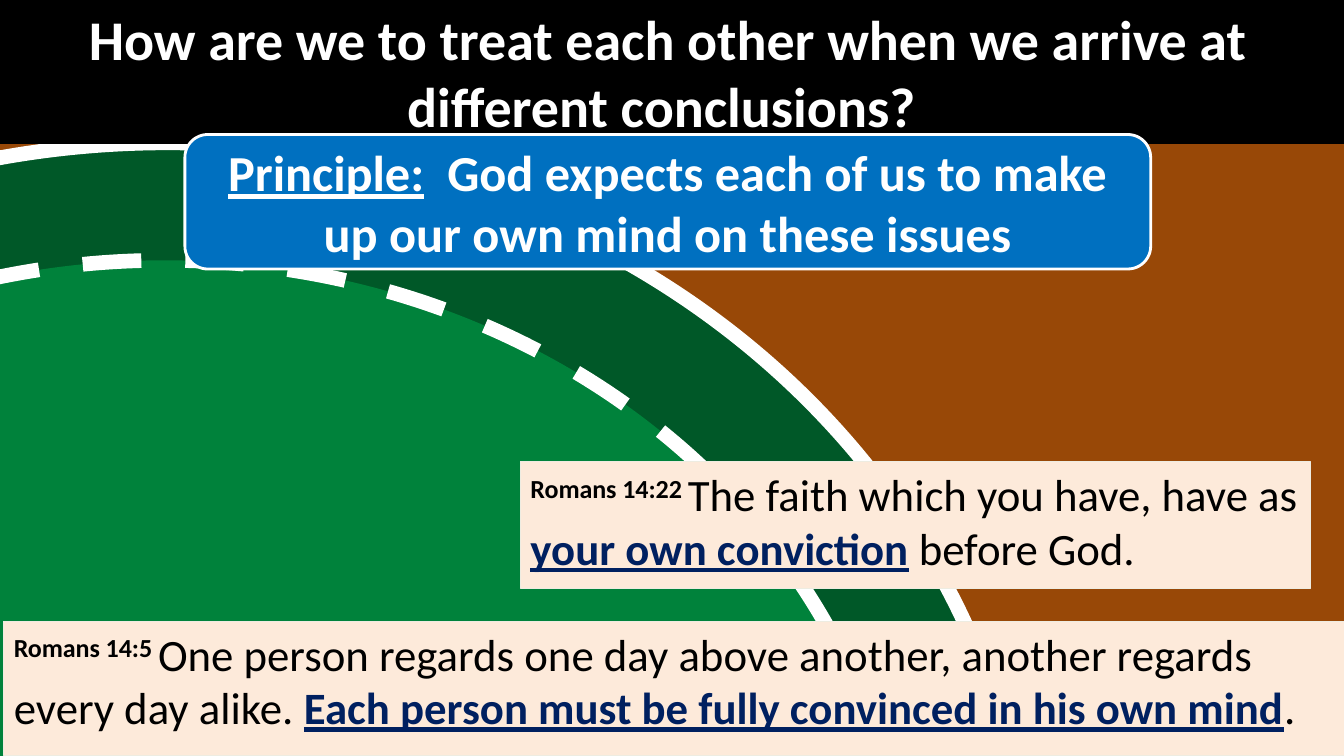
from dataclasses import dataclass

from pptx import Presentation
from pptx.dml.color import RGBColor
from pptx.enum.dml import MSO_LINE
from pptx.enum.shapes import MSO_SHAPE
from pptx.enum.text import MSO_ANCHOR, MSO_AUTO_SIZE, PP_ALIGN
from pptx.util import Cm, Pt

BLACK = RGBColor(0x00, 0x00, 0x00)
WHITE = RGBColor(0xFF, 0xFF, 0xFF)
BROWN = RGBColor(0x98, 0x48, 0x07)
DARK_GREEN = RGBColor(0x00, 0x58, 0x28)
GREEN = RGBColor(0x00, 0x82, 0x3B)
BLUE = RGBColor(0x00, 0x70, 0xC0)
NAVY = RGBColor(0x00, 0x20, 0x60)
CREAM = RGBColor(0xFD, 0xEA, 0xDA)
IVORY = RGBColor(0xEE, 0xEC, 0xE1)


@dataclass(frozen=True)
class Frame:
    """Left, top, width and height in centimetres."""
    left: float
    top: float
    width: float
    height: float


@dataclass(frozen=True)
class Span:
    text: str
    color: RGBColor
    bold: bool = False
    underline: bool = False


@dataclass(frozen=True)
class Circle:
    frame: Frame
    fill: RGBColor
    dash: MSO_LINE


@dataclass(frozen=True)
class Verse:
    frame: Frame
    reference: str
    opening: str
    emphasis: str
    ending: str


CIRCLES = [
    Circle(Frame(-17.57, 3.6, 43.6, 39.58), DARK_GREEN, MSO_LINE.SOLID),
    Circle(Frame(-14.6, 6.56, 37.47, 33.66), GREEN, MSO_LINE.DASH),
]
VERSES = [
    Verse(Frame(0.1, 15.66, 33.87, 3.39), "Romans 14:5 ",
          "One person regards one day above another, another regards every day alike. ",
          "Each person must be fully convinced in his own mind", "."),
    Verse(Frame(13.12, 11.64, 19.9, 3.18), "Romans 14:22 ",
          "The faith which you have, have as ", "your own conviction", " before God."),
]
TITLE_FRAME = Frame(-0.64, 0, 34.93, 3.6)
PRINCIPLE_FRAME = Frame(4.66, 3.39, 24.34, 3.39)


def paint(shape, fill: RGBColor, line: RGBColor, width: float) -> None:
    shape.fill.solid()
    shape.fill.fore_color.rgb = fill
    shape.line.color.rgb = line
    shape.line.width = Pt(width)


def place(shape, frame: Frame) -> None:
    shape.left, shape.top = Cm(frame.left), Cm(frame.top)
    shape.width, shape.height = Cm(frame.width), Cm(frame.height)


def add_box(page, kind: MSO_SHAPE, frame: Frame):
    box = page.shapes.add_shape(kind, 0, 0, 0, 0)
    place(box, frame)
    box.shadow.inherit = False
    return box


def write(box, spans: list[Span], size: int, align: PP_ALIGN, anchor: MSO_ANCHOR) -> None:
    text_frame = box.text_frame
    text_frame.word_wrap = True
    text_frame.auto_size = MSO_AUTO_SIZE.NONE
    text_frame.vertical_anchor = anchor
    para = text_frame.paragraphs[0]
    para.alignment = align
    para.font.name = "Calibri"
    para.font.size = Pt(size)
    for span in spans:
        run = para.add_run()
        run.text = span.text
        run.font.name = "Calibri"
        run.font.size = Pt(size)
        run.font.color.rgb = span.color
        run.font.bold = span.bold
        run.font.underline = span.underline


def add_circle(page, circle: Circle) -> None:
    box = add_box(page, MSO_SHAPE.OVAL, circle.frame)
    paint(box, circle.fill, WHITE, 10.5)
    box.line.dash_style = circle.dash


def add_verse(page, verse: Verse) -> None:
    box = add_box(page, MSO_SHAPE.RECTANGLE, verse.frame)
    paint(box, CREAM, IVORY, 0.75)
    spans = [
        Span(verse.reference, BLACK, bold=True),
        Span(verse.opening, BLACK),
        Span(verse.emphasis, NAVY, bold=True, underline=True),
        Span(verse.ending, BLACK),
    ]
    write(box, spans, 32, PP_ALIGN.LEFT, MSO_ANCHOR.TOP)
    # The reference is superscript
    box.element.xpath(".//a:rPr")[0].set("baseline", "30000")


def add_title(page) -> None:
    title = page.shapes.title
    place(title, TITLE_FRAME)
    paint(title, BLACK, BLACK, 2)
    question = "How are we to treat each other when we arrive at different conclusions? "
    write(title, [Span(question, WHITE, bold=True)], 40, PP_ALIGN.CENTER, MSO_ANCHOR.MIDDLE)
    # Bring the title in front of the circles
    title.element.getparent().append(title.element)


def add_principle(page) -> None:
    box = add_box(page, MSO_SHAPE.ROUNDED_RECTANGULAR_CALLOUT, PRINCIPLE_FRAME)
    for index, value in enumerate((-0.22, 0.5, 0.17)):
        box.adjustments[index] = value
    paint(box, BLUE, WHITE, 2)
    spans = [
        Span("Principle:", WHITE, bold=True, underline=True),
        Span("  God expects each of us to make up our own mind on these issues", WHITE, bold=True),
    ]
    write(box, spans, 36, PP_ALIGN.CENTER, MSO_ANCHOR.MIDDLE)


def main() -> None:
    deck = Presentation()
    deck.slide_width, deck.slide_height = Cm(33.87), Cm(19.05)
    page = deck.slides.add_slide(deck.slide_layouts.get_by_name("Title Only"))
    page.background.fill.solid()
    page.background.fill.fore_color.rgb = BROWN

    # Circles behind, then verses, then title and principle in front
    for circle in CIRCLES:
        add_circle(page, circle)
    for verse in VERSES:
        add_verse(page, verse)
    add_title(page)
    add_principle(page)
    deck.save("out.pptx")


if __name__ == "__main__":
    main()
